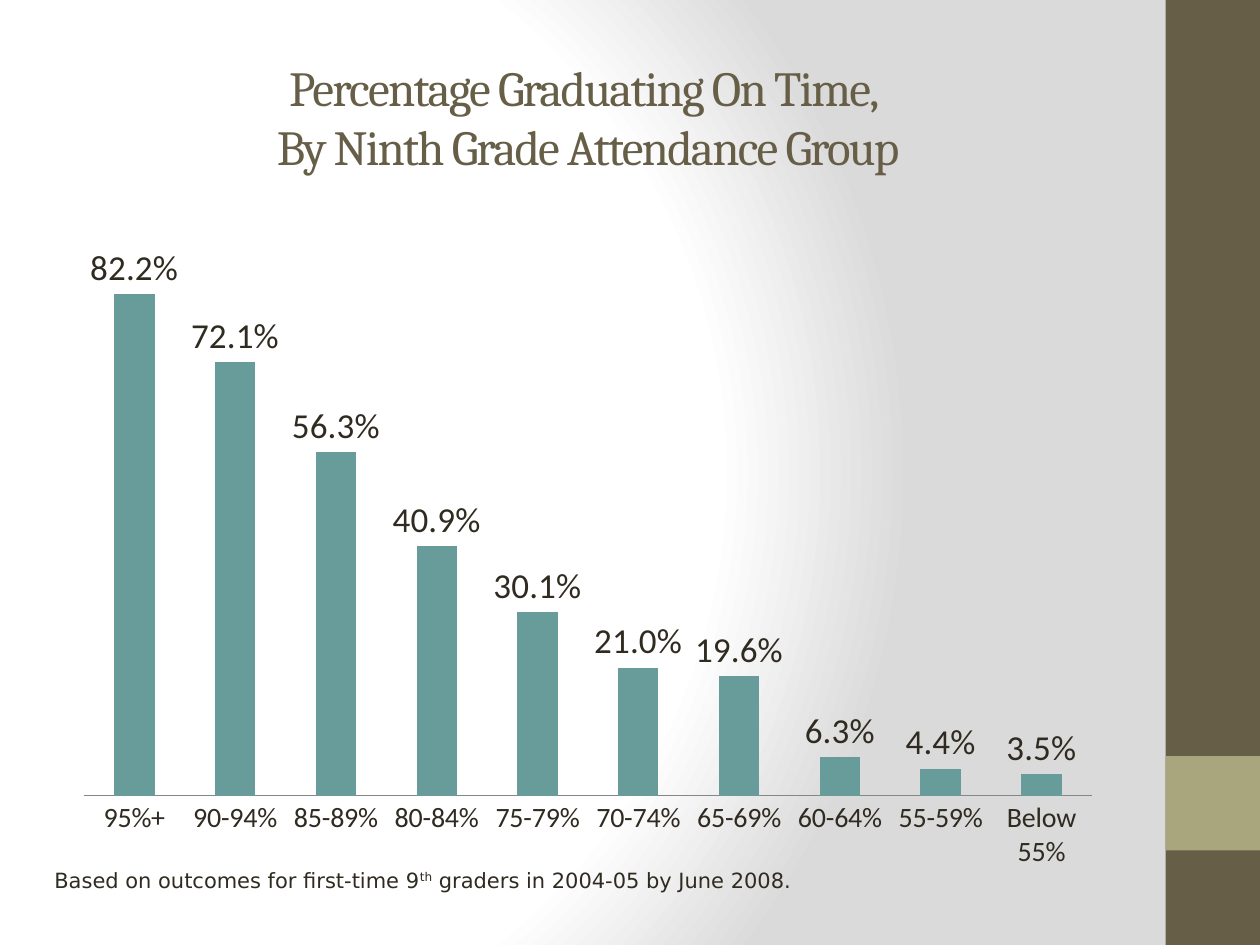
from lxml import etree
from pptx import Presentation
from pptx.chart.data import CategoryChartData
from pptx.dml.color import RGBColor
from pptx.enum.chart import XL_CHART_TYPE, XL_LABEL_POSITION, XL_TICK_LABEL_POSITION, XL_TICK_MARK
from pptx.enum.shapes import MSO_SHAPE
from pptx.enum.text import MSO_ANCHOR, PP_ALIGN
from pptx.oxml import parse_xml
from pptx.oxml.ns import nsdecls, qn
from pptx.util import Pt

BROWN = RGBColor(0x67, 0x5E, 0x47)
OLIVE = RGBColor(0xA9, 0xA5, 0x7C)
TEAL = RGBColor(0x68, 0x9C, 0x9A)
INK = RGBColor(0x2F, 0x2B, 0x20)
AXIS_GRAY = RGBColor(0x86, 0x86, 0x86)
WHITE = RGBColor(0xFF, 0xFF, 0xFF)
PALE_GRAY = RGBColor(0xDA, 0xDA, 0xDA)

GRADUATION_RATES = {
    "95%+": 0.822, "90-94%": 0.711, "85-89%": 0.563, "80-84%": 0.409,
    "75-79%": 0.301, "70-74%": 0.21, "65-69%": 0.196, "60-64%": 0.063,
    "55-59%": 0.044, "Below 55%": 0.035,
}
LABEL_OVERRIDES = {1: "72.1%"}


def style_font(font, name, size, color):
    font.name, font.size, font.bold = name, Pt(size), False
    font.color.rgb = color


def add_text(slide, box, runs, font, size, color, align=PP_ALIGN.LEFT,
             anchor=MSO_ANCHOR.TOP, spacing=None):
    """Place one paragraph; runs are (text, baseline percent) pairs."""
    frame = slide.shapes.add_textbox(*map(Pt, box)).text_frame
    frame.word_wrap = True
    frame.vertical_anchor = anchor
    paragraph = frame.paragraphs[0]
    paragraph.alignment = align
    for index, (text, baseline) in enumerate(runs):
        if index and text.startswith("\n"):
            paragraph.add_line_break()
        run = paragraph.add_run()
        run.text = text.lstrip("\n")
        style_font(run.font, font, size, color)
        properties = run.font._element
        if baseline:
            properties.set("baseline", str(baseline * 1000))
        if spacing:
            properties.set("spc", str(spacing * 100))


def paint_background(slide):
    fill = slide.background.fill
    fill.gradient()
    gradient = fill._fill._gradFill
    for child in list(gradient):
        gradient.remove(child)
    stops = "".join(
        f'<a:gs pos="{position * 1000}"><a:srgbClr val="{color}"/></a:gs>'
        for position, color in ((0, WHITE), (75, WHITE), (100, PALE_GRAY)))
    template = parse_xml(
        f'<a:gradFill {nsdecls("a")}><a:gsLst>{stops}</a:gsLst><a:path path="circle">'
        '<a:fillToRect l="20000" t="50000" r="100000" b="50000"/></a:path></a:gradFill>')
    gradient.extend(list(template))


def add_side_band(slide, left, top, width, height):
    accent_top = top + height * 0.8
    for y, depth, color in ((top, height, BROWN), (accent_top, width, OLIVE)):
        band = slide.shapes.add_shape(
            MSO_SHAPE.RECTANGLE, Pt(left), Pt(y), Pt(width), Pt(depth))
        band.shadow.inherit = False
        band.fill.solid()
        band.fill.fore_color.rgb = color
        band.line.fill.background()


def set_plot_layout(chart, x, y, w, h):
    plot_area = chart._chartSpace.chart.plotArea
    for old in plot_area.findall(qn("c:layout")):
        plot_area.remove(old)
    layout = etree.Element(qn("c:layout"))
    manual = etree.SubElement(layout, qn("c:manualLayout"))
    for tag, value in (("layoutTarget", "inner"), ("xMode", "edge"), ("yMode", "edge"),
                       ("x", x), ("y", y), ("w", w), ("h", h)):
        etree.SubElement(manual, qn(f"c:{tag}")).set("val", str(value))
    plot_area.insert(0, layout)


def add_graduation_chart(slide, box):
    data = CategoryChartData(number_format="0.0%")
    data.categories = list(GRADUATION_RATES)
    data.add_series("Series 1", list(GRADUATION_RATES.values()))
    chart = slide.shapes.add_chart(
        XL_CHART_TYPE.COLUMN_CLUSTERED, *map(Pt, box), data).chart
    chart.has_legend = chart.has_title = False
    style_font(chart.font, "Calibri", 10, INK)
    set_plot_layout(chart, 0.02, 0.04, 0.96, 0.83)

    # Axes
    rates = chart.value_axis
    rates.visible = rates.has_major_gridlines = False
    rates.minimum_scale, rates.maximum_scale = 0, 0.9
    groups = chart.category_axis
    groups.major_tick_mark = groups.minor_tick_mark = XL_TICK_MARK.NONE
    groups.tick_label_position = XL_TICK_LABEL_POSITION.NEXT_TO_AXIS
    groups.format.line.color.rgb = AXIS_GRAY
    style_font(groups.tick_labels.font, "Calibri", 16, INK)

    # Columns
    plot = chart.plots[0]
    plot.gap_width, plot.overlap, plot.vary_by_categories = 150, -25, False
    columns = plot.series[0]
    columns.format.fill.solid()
    columns.format.fill.fore_color.rgb = TEAL

    # Value labels
    labels = columns.data_labels
    labels.show_value = True
    labels.number_format, labels.number_format_is_linked = "0.0%", False
    labels.position = XL_LABEL_POSITION.OUTSIDE_END
    style_font(labels.font, "Calibri", 20, INK)
    for index, text in LABEL_OVERRIDES.items():
        label = columns.points[index].data_label
        run = label.text_frame.paragraphs[0].add_run()
        run.text = text
        style_font(run.font, "Calibri", 20, INK)
        label.position = XL_LABEL_POSITION.OUTSIDE_END


def build_slide(slide, width, height):
    paint_background(slide)
    add_side_band(slide, width - 54, 0, 54, height)
    # Title
    add_text(slide, (36, 21.6, 600, 90),
             [("Percentage Graduating On Time, ", 0),
              ("\nBy Ninth Grade Attendance Group", 0)],
             "Cambria", 28, BROWN, align=PP_ALIGN.CENTER,
             anchor=MSO_ANCHOR.MIDDLE, spacing=-1)
    add_graduation_chart(slide, (36, 126, 600, 378))
    # Footnote
    add_text(slide, (24, 492, 534, 21.6),
             [("Based on outcomes for first-time 9", 0), ("th", 30),
              (" graders in 2004-05 by June 2008.", 0)],
             "DejaVu Sans", 12, INK)


def main():
    deck = Presentation()
    deck.slide_width, deck.slide_height = Pt(720), Pt(540)
    build_slide(deck.slides.add_slide(deck.slide_layouts[6]), 720, 540)
    deck.save("out.pptx")


if __name__ == "__main__":
    main()
